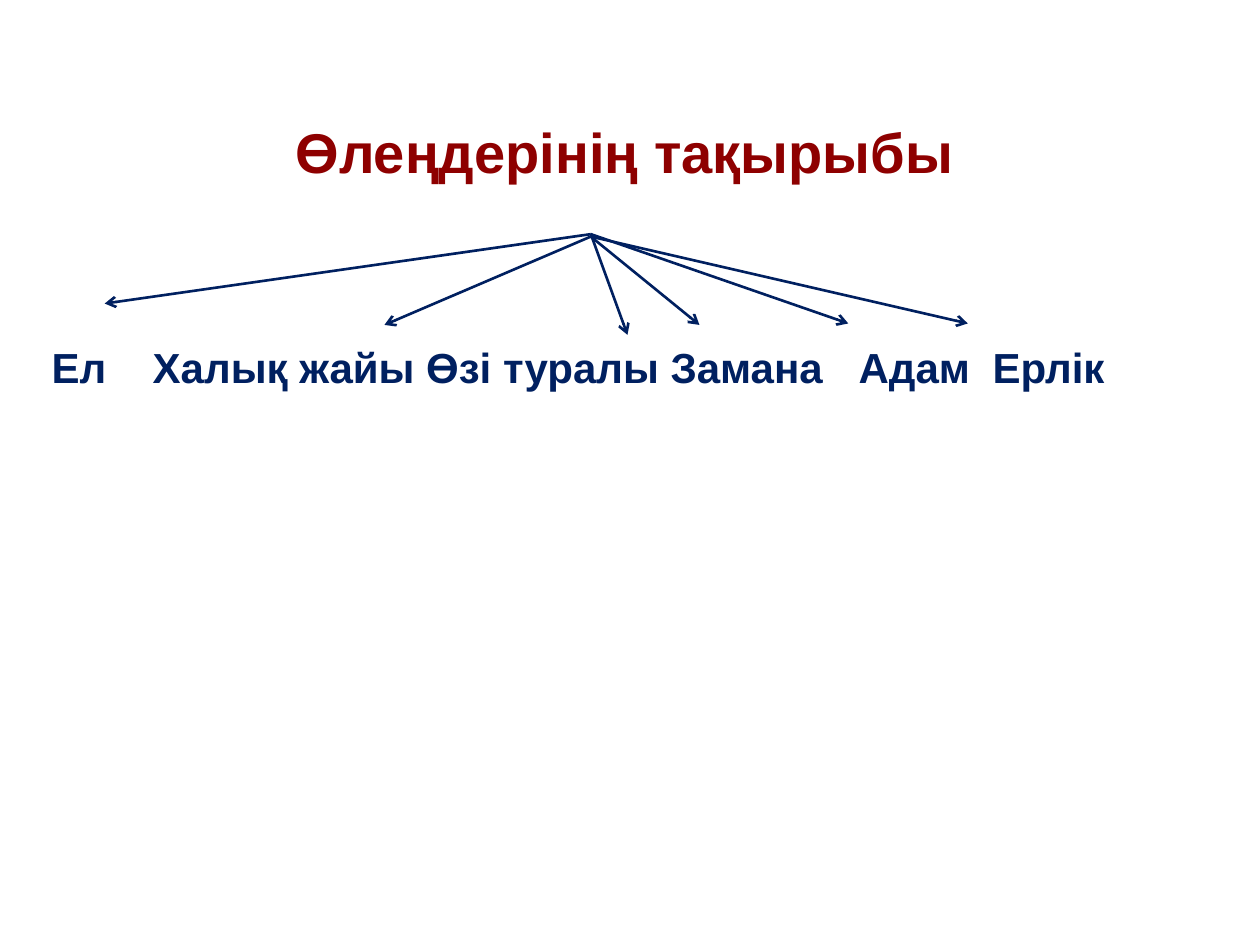
from lxml import etree
from pptx import Presentation
from pptx.dml.color import RGBColor
from pptx.enum.shapes import MSO_CONNECTOR
from pptx.enum.text import MSO_ANCHOR, PP_ALIGN
from pptx.oxml.ns import qn
from pptx.util import Cm, Pt

STRAIGHT = MSO_CONNECTOR.STRAIGHT
TOP, MIDDLE = MSO_ANCHOR.TOP, MSO_ANCHOR.MIDDLE
LEFT, CENTER = PP_ALIGN.LEFT, PP_ALIGN.CENTER
DARK_RED = RGBColor(0x8E, 0x00, 0x00)
NAVY = RGBColor(0x00, 0x20, 0x60)

TITLE = "Өлеңдерінің тақырыбы "
TOPICS = "Ел\tХалық жайы Өзі туралы Замана\tАдам\tЕрлік"
TOPIC_TABS = (2.04, 16.27, 18.97)

# Arrow start height and tip, in cm from the top left of the arrow region
ARROW_START = 9.8
ARROWS = (
    (0, (0, 1.4)),
    (0.05, (5.64, 1.83)),
    (0.05, (17.4, 1.8)),
    (0.05, (11.99, 1.83)),
    (0, (10.54, 2.03)),
    (0, (14.99, 1.8)),
)


def add_text(slide, box, text, size, color, alignment, anchor):
    shape = slide.shapes.add_textbox(*(Cm(length) for length in box))
    frame = shape.text_frame
    frame.word_wrap = True
    frame.vertical_anchor = anchor
    paragraph = frame.paragraphs[0]
    paragraph.alignment = alignment
    run = paragraph.add_run()
    run.text = text
    run.font.name = "Arial"
    run.font.size = Pt(size)
    run.font.bold = True
    run.font.color.rgb = color
    return paragraph


def add_title(slide, box):
    add_text(slide, box, TITLE, 32, DARK_RED, CENTER, MIDDLE)


def add_topics(slide, box):
    """Place the topics on one line, spread by tab stops."""
    paragraph = add_text(slide, box, TOPICS, 24, NAVY, LEFT, TOP)
    paragraph.space_before = Pt(4.8)
    properties = paragraph._p.get_or_add_pPr()
    tabs = etree.SubElement(properties, qn("a:tabLst"))
    for position in TOPIC_TABS:
        etree.SubElement(tabs, qn("a:tab"), pos=str(Cm(position)), algn="l")


def add_arrow(slide, start, tip):
    arrow = slide.shapes.add_connector(
        STRAIGHT, *(Cm(length) for length in (*start, *tip)))
    arrow.line.color.rgb = NAVY
    arrow.line.width = Pt(1.5)
    etree.SubElement(arrow.line._get_or_add_ln(), qn("a:tailEnd"), type="arrow")
    etree.SubElement(arrow._element.spPr, qn("a:effectLst"))


def add_arrow_fan(slide, left, top):
    """Spread arrows from below the title to the topics."""
    for start_y, (tip_x, tip_y) in ARROWS:
        add_arrow(slide, (left + ARROW_START, top + start_y),
                  (left + tip_x, top + tip_y))


def main():
    presentation = Presentation()
    presentation.slide_width = Cm(25.4)
    presentation.slide_height = Cm(19.05)
    slide = presentation.slides.add_slide(presentation.slide_layouts[6])
    add_title(slide, (3.76, 2.18, 17.98, 1.75))
    add_topics(slide, (0.79, 6.76, 23.72, 1.98))
    add_arrow_fan(slide, 2.11, 4.72)
    presentation.save("out.pptx")


if __name__ == "__main__":
    main()
